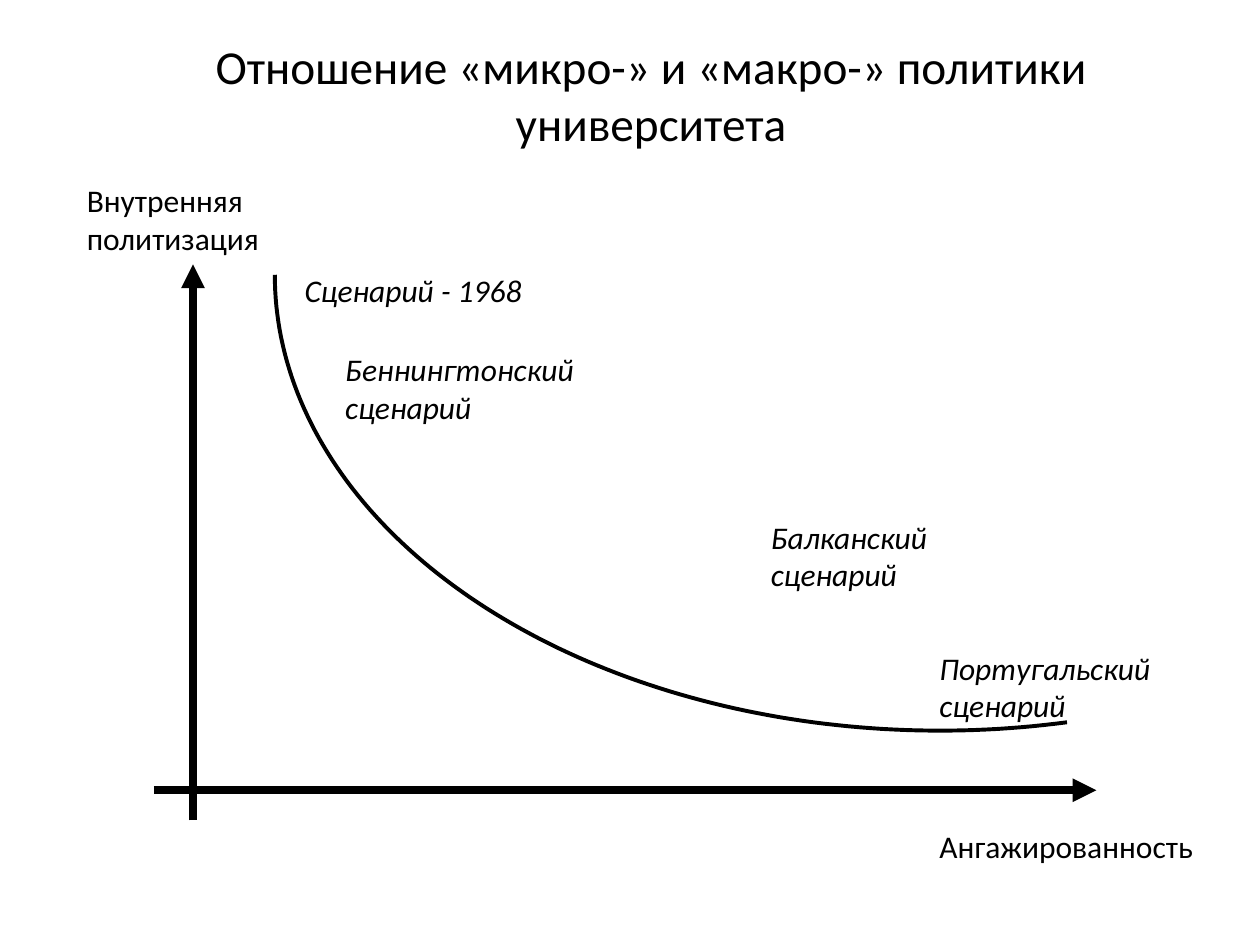
from math import cos, radians, sin

from lxml.etree import SubElement
from pptx import Presentation
from pptx.dml.color import RGBColor
from pptx.enum.shapes import MSO_CONNECTOR
from pptx.enum.text import MSO_ANCHOR, PP_ALIGN
from pptx.oxml.ns import qn
from pptx.util import Cm, Pt

BLACK = "000000"
LABELS = [
    ("Внутренняя политизация", 1.5, 3.53, 6, 1.78, False),
    ("Ангажированность", 18.69, 16.54, 6.2, 1.02, False),
    ("Португальский сценарий", 18.69, 12.95, 6, 1.78, True),
    ("Сценарий - 1968", 5.89, 5.33, 6, 1.02, True),
    ("Беннингтонский сценарий", 6.71, 6.93, 6, 1.78, True),
    ("Балканский сценарий", 15.29, 10.31, 6, 1.78, True),
]


def rgb(color):
    return RGBColor.from_string(color)


def add_text(s, text, x, y, w, h, italic=False, size=18,
             align=PP_ALIGN.LEFT, anchor=MSO_ANCHOR.TOP):
    sp = s.shapes.add_textbox(Cm(x), Cm(y), Cm(w), Cm(h))
    tf = sp.text_frame
    tf.word_wrap = True
    tf.vertical_anchor = anchor
    p = tf.paragraphs[0]
    p.alignment = align
    r = p.add_run()
    r.text = text
    r.font.name = "Calibri"
    r.font.size = Pt(size)
    r.font.italic = italic
    r.font.color.rgb = rgb(BLACK)


def set_line(sp, width):
    sp.line.color.rgb = rgb(BLACK)
    sp.line.width = Pt(width)


def add_axis(group, x1, y1, x2, y2):
    axis = group.shapes.add_connector(
        MSO_CONNECTOR.STRAIGHT, Cm(x1), Cm(y1), Cm(x2), Cm(y2))
    set_line(axis, 4.5)
    SubElement(axis.line._get_or_add_ln(), qn("a:tailEnd"), type="triangle")
    SubElement(axis._element.spPr, qn("a:effectLst"))


def add_arc(s, cx, cy, rx, ry, start, end):
    points = [(Cm(cx + rx * cos(radians(a))), Cm(cy + ry * sin(radians(a))))
              for a in range(start, end + 1)]
    builder = s.shapes.build_freeform(*points[0])
    builder.add_line_segments(points[1:], close=False)
    sp = builder.convert_to_shape()
    sp.shadow.inherit = False
    sp.fill.background()
    set_line(sp, 2.25)


def main():
    prs = Presentation()
    prs.slide_width, prs.slide_height = Cm(25.4), Cm(19.05)
    s = prs.slides.add_slide(prs.slide_layouts[6])
    add_text(s, "Отношение «микро-» и «макро-» политики университета",
             2.9, 0.71, 20.45, 2.39, size=27,
             align=PP_ALIGN.CENTER, anchor=MSO_ANCHOR.MIDDLE)
    axes = s.shapes.add_group_shape()
    add_axis(axes, 3.89, 16.54, 3.89, 5.33)
    add_axis(axes, 3.1, 15.93, 22.1, 15.93)
    add_arc(s, 18.95, 5.54, 13.41, 9.19, 79, 180)
    for label in LABELS:
        add_text(s, *label)
    prs.save("out.pptx")


if __name__ == "__main__":
    main()
